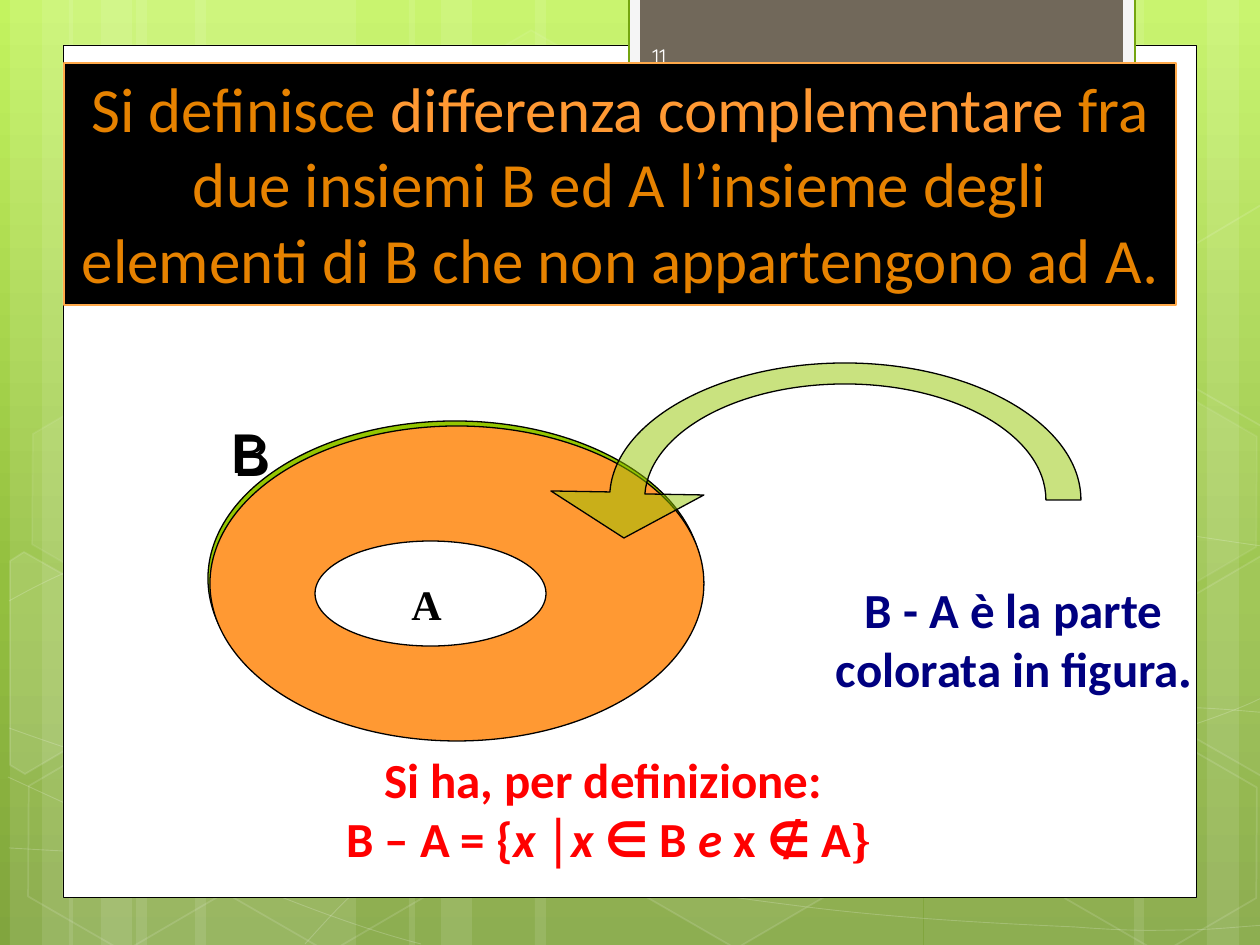
from copy import deepcopy
from pptx import Presentation
from pptx.dml.color import RGBColor
from pptx.enum.shapes import MSO_SHAPE
from pptx.enum.text import MSO_ANCHOR, MSO_AUTO_SIZE, PP_ALIGN
from pptx.oxml.ns import qn
from pptx.util import Inches, Pt

SCALE = Inches(1) / 126
COLORS = {
    "white": "FFFFFF", "black": "000000", "frame": "F5F5F5", "frame line": "74A510",
    "tab": "71685A", "number": "FEFEFE", "title line": "FFA94A", "amber": "E68200",
    "orange": "FF9933", "green": "94C600", "navy": "000080", "red": "FF0000",
}
BACKGROUND = [(0, "C3F35F"), (0.62, "93BF3F"), (1, "81A53E")]

STRIPES = [(136, 220), (10, 63), (42, 105), (195, 220), (69, 63), (101, 105),
           (924, 220), (1207, 63), (1134, 105), (535, 388), (409, 63), (441, 105)]
WAVES = [
    [(9, 848), (77, 852), (145, 856), (239, 854), (334, 853), (451, 851), (577, 838),
     (703, 825), (882, 801), (998, 777), (1113, 753), (1231, 716), (1269, 694)],
    [(9, 601), (45, 581), (82, 562), (152, 543), (224, 524), (326, 499), (437, 488),
     (549, 479), (685, 478), (824, 488), (963, 498), (1193, 537), (1269, 547)],
    [(8, 777), (160, 847), (311, 916), (421, 944)],
    [(9, 728), (48, 742), (88, 756), (161, 776), (234, 795), (344, 827), (450, 848),
     (554, 869), (687, 892), (791, 905), (896, 919), (1008, 924), (1075, 927),
     (1140, 932), (1158, 930), (1191, 930), (1223, 929), (1246, 926), (1269, 925)],
    [(305, 944), (328, 919), (350, 893), (381, 871), (411, 848), (454, 823), (489, 805),
     (524, 788), (546, 780), (592, 767), (638, 754), (722, 737), (766, 728),
     (811, 719), (818, 719), (857, 717), (896, 713), (958, 709), (1000, 708),
     (1045, 707), (1116, 708), (1116, 708), (1144, 708), (1173, 708), (1201, 708),
     (1223, 709), (1244, 711), (1256, 712), (1268, 713), (1264, 712), (1268, 713)],
]
HEXAGONS = [(421, 45, 4, 8), (626, 742, 6, 12), (14, 745, 0, 12), (18, 393, 7, 8),
            (219, 746, 0, 12), (949, 571, 10, 12), (1051, 747, 0, 12), (1051, 396, 7, 8)]
CUT_HEXAGONS = [
    ([(10, 561), (24, 552), (121, 607), (120, 718), (25, 774), (10, 765)], 10),
    ([(1167, 611), (1261, 556), (1271, 562), (1271, 772), (1263, 777), (1167, 722)], 4),
    ([(1167, 261), (1261, 205), (1273, 212), (1271, 422), (1263, 427), (1167, 372)], 0),
]
PANELS = [((63, 45, 1134, 853), "white", ("black", 0.5)),
          ((629, -3, 506, 96), "frame", ("frame line", 1.25)),
          ((640, -3, 483, 86), "tab", None)]
ARROW = [(645, 494), (650, 432), (738, 384), (845, 384), (956, 384), (1046, 436), (1046, 500),
         (1081, 500), (1081, 425), (975, 363), (845, 363), (719, 363), (615, 421), (610, 492),
         (551, 491), (624, 538), (704, 495)]
ARROW_CURVES = [0, 3, 7, 10]
SET_B_PLACES = [((208, 421), (218, 411), "green"), ((210, 426), (221, 414), "orange")]

SERIF = {"name": "Times New Roman"}
ITALIC, UPRIGHT = {"italic": True}, {"italic": False}
TITLE = [("Si definisce ", {"name": "Calibri", "size": 36, "color": "amber"}),
         ("differenza complementare", {"color": "orange"}),
         (" fra due insiemi B ed A l’insieme degli elementi di B che non appartengono ad A",
          {"color": "amber"}),
         (".", SERIF)]
NUMBER = [("11", {"name": "Quicksand", "size": 12, "color": "number"})]
SET_B = [("B", {"name": "Arial", "size": 32, "color": "black"})]
SET_A = [("A", {"name": "Times New Roman", "size": 24, "color": "black", "bold": True})]
CAPTION = [("B - A è la parte colorata in figura",
            {"name": "Calibri", "size": 28, "color": "navy", "bold": True}), (".", SERIF)]
DEFINITION = [("Si ha, per definizione: ",
               {"name": "Calibri", "size": 28, "color": "red", "bold": True}),
              ("\n", {}), ("B – A = {", {}), ("x ", ITALIC), ("│", UPRIGHT), ("x ", ITALIC),
              ("∈ B ", UPRIGHT), ("e", ITALIC), (" x ∉ A", UPRIGHT), ("}", SERIF)]


def emu(*lengths):
    return [round(length * SCALE) for length in lengths]


def set_color(fill, name, alpha):
    fill.solid()
    fill.fore_color.rgb = RGBColor.from_string(COLORS[name])
    if alpha < 100:
        color = fill._xPr.find(qn("a:solidFill"))[0]
        color.append(color.makeelement(qn("a:alpha"), {"val": str(alpha * 1000)}))


def paint(shape, fill=None, line=None, alpha=100, line_alpha=100):
    if fill and alpha:
        set_color(shape.fill, fill, alpha)
    else:
        shape.fill.background()
    if line:
        set_color(shape.line.fill, line[0], line_alpha)
        shape.line.width = Pt(line[1])
    else:
        shape.line.fill.background()


def add_shape(kind, box, **style):
    shape = slide.shapes.add_shape(kind, *emu(*box))
    shape.shadow.inherit = False
    paint(shape, **style)
    return shape


def add_outline(points, curve_starts=(), close=True, **style):
    builder = slide.shapes.build_freeform(*points[0], scale=SCALE)
    builder.add_line_segments(points[1:], close=close)
    shape = builder.convert_to_shape()
    shape.shadow.inherit = False
    paint(shape, **style)
    segments = list(shape._element.iter(qn("a:lnTo")))
    for start in curve_starts:
        first, *others = segments[start:start + 3]
        curve = first.makeelement(qn("a:cubicBezTo"), {})
        first.addprevious(curve)
        for segment in [first, *others]:
            curve.append(segment[0])
            segment.getparent().remove(segment)


def write(shape, runs, align=PP_ALIGN.LEFT, anchor=MSO_ANCHOR.TOP):
    frame = shape.text_frame
    for key, value in {"word_wrap": True, "auto_size": MSO_AUTO_SIZE.NONE,
                       "vertical_anchor": anchor}.items():
        setattr(frame, key, value)
    paragraph = frame.paragraphs[0]
    paragraph.alignment = align
    current = {}
    for text, changes in runs:
        if text == "\n":
            paragraph.add_line_break()
            continue
        current = {**current, **changes}
        run = paragraph.add_run()
        run.text = text
        for key, value in current.items():
            if key == "color":
                run.font.color.rgb = RGBColor.from_string(COLORS[value])
            else:
                setattr(run.font, key, Pt(value) if key == "size" else value)


def add_text(box, runs, **layout):
    write(slide.shapes.add_textbox(*emu(*box)), runs, **layout)


presentation = Presentation()
presentation.slide_width, presentation.slide_height = emu(1260, 945)
slide = presentation.slides.add_slide(presentation.slide_layouts[5])

background = slide.background.fill
background.gradient()
background.gradient_angle = 270
stop_list = next(slide._element.iter(qn("a:gsLst")))
stop_list.append(deepcopy(stop_list[-1]))
for stop, (position, color) in zip(background.gradient_stops, BACKGROUND):
    stop.position = position
    stop.color.rgb = RGBColor.from_string(color)

for left, width in STRIPES:
    add_shape(MSO_SHAPE.RECTANGLE, (left, 0, width, 945), fill="white", alpha=10)
for wave in WAVES:
    add_outline(wave, range(0, len(wave) - 1, 3), close=False,
                line=("white", 0.5), line_alpha=20)
for left, top, alpha, line_alpha in HEXAGONS:
    hexagon = add_shape(MSO_SHAPE.HEXAGON, (left, top, 220, 192), fill="white", alpha=alpha,
                        line=("white", 1), line_alpha=line_alpha)
    hexagon.adjustments[0] = 0.285
    hexagon.rotation = 30
for points, alpha in CUT_HEXAGONS:
    add_outline(points, fill="white", alpha=alpha, line=("white", 1), line_alpha=12)
for box, fill, line in PANELS:
    add_shape(MSO_SHAPE.RECTANGLE, box, fill=fill, line=line)
add_text((640, 31, 184, 50), NUMBER, anchor=MSO_ANCHOR.MIDDLE)

title = slide.shapes.title
title.left, title.top, title.width, title.height = emu(64, 63, 1112, 242)
paint(title, "black", ("title line", 0.75))
write(title, TITLE, align=PP_ALIGN.CENTER)
slide.shapes._spTree.append(title._element)

outline = ("black", 0.75)
for corner, label_corner, fill in SET_B_PLACES:
    add_shape(MSO_SHAPE.OVAL, (*corner, 494, 315), fill=fill, line=outline)
    add_text((*label_corner, 63, 79), SET_B)
add_shape(MSO_SHAPE.OVAL, (315, 541, 231, 105), fill="white", line=outline)
write(add_shape(MSO_SHAPE.RECTANGLE, (399, 572, 95, 63), fill="white"), SET_A)
add_text((798, 573, 431, 130), CAPTION, align=PP_ALIGN.CENTER)
add_text((194, 743, 829, 130), DEFINITION, align=PP_ALIGN.CENTER)
add_outline(ARROW, ARROW_CURVES, fill="green", alpha=50, line=outline)

presentation.save("out.pptx")
